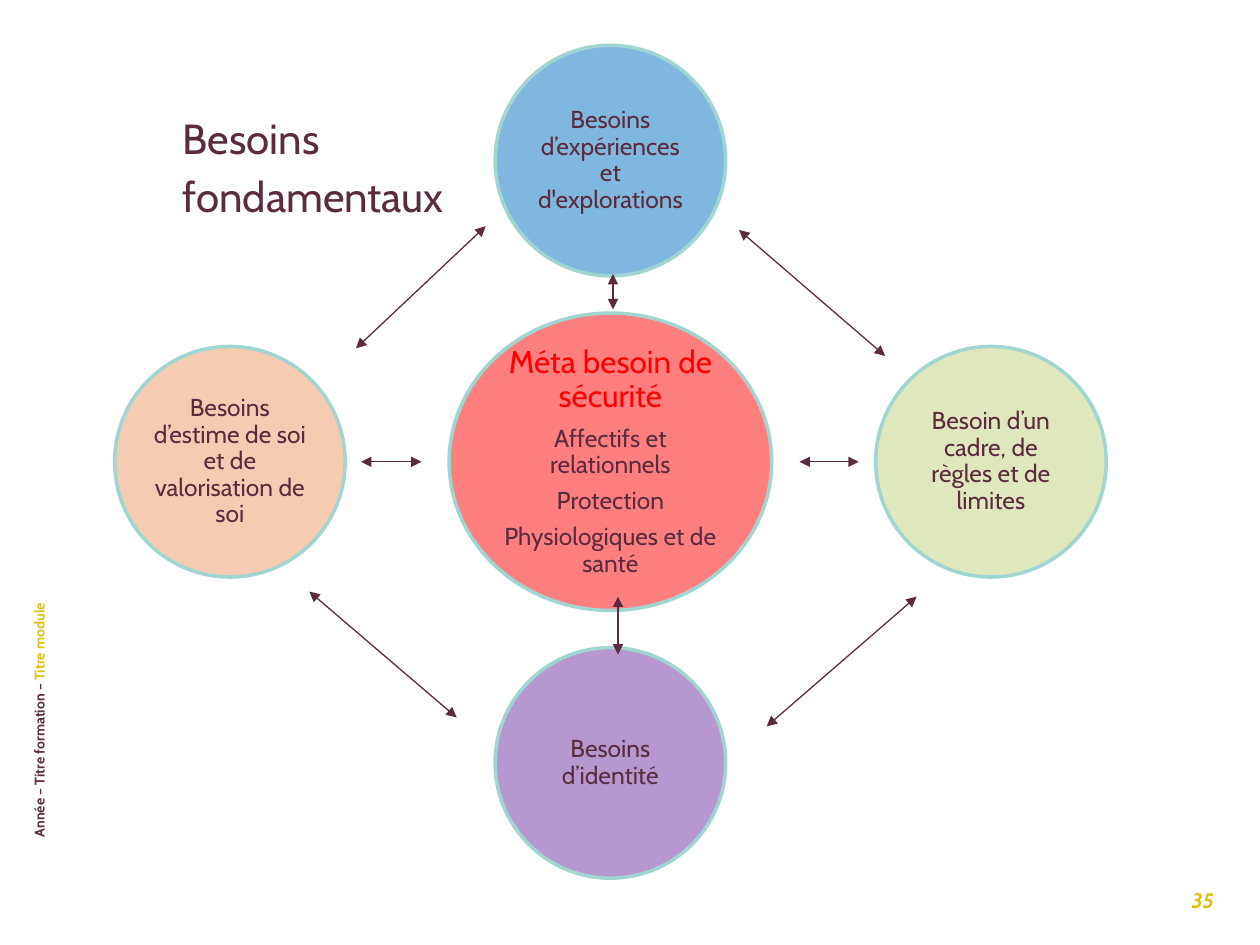
from dataclasses import dataclass

from pptx import Presentation
from pptx.dml.color import RGBColor
from pptx.enum.shapes import MSO_CONNECTOR, MSO_SHAPE
from pptx.enum.text import MSO_ANCHOR, MSO_AUTO_SIZE, PP_ALIGN
from pptx.oxml.ns import qn
from pptx.util import Inches, Pt
from lxml.etree import SubElement


@dataclass(frozen=True)
class Theme:
    font: str = "Cabin"
    plum: str = "5B2C3E"
    gold: str = "DBC10C"
    outline: str = "A1D5D2"
    red: str = "FF0000"
    blue: str = "0070C0"
    green: str = "C0D07A"
    purple: str = "7030A0"
    orange: str = "ED9B66"
    title: int = 24
    heading: int = 18
    body: int = 14
    number: int = 12
    footer: int = 8


THEME = Theme()
CELL = Inches(0.1)  # the slide is a grid of 100 columns by 75 rows

# Horizontal and vertical step from the centre, in satellites' own units
SATELLITES = [
    (0, -1, THEME.blue, "Besoins d’expériences et d'explorations"),
    (1, 0, THEME.green, "Besoin d’un cadre, de règles et de limites"),
    (0, 1, THEME.purple, "Besoins d’identité"),
    (-1, 0, THEME.orange, "Besoins d’estime de soi et de valorisation de soi"),
]
CORE_NEEDS = ["Méta besoin de sécurité", "Affectifs et relationnels",
              "Protection", "Physiologiques et de santé"]
# Arrow ends in cells, measured from the centre of the diagram
ARROWS = [
    ((-19.8, 0), (-15, 0)),
    ((15, 0), (19.7, 0)),
    ((-20.2, -9), (-9.9, -18.7)),
    ((12.4, 21), (24.3, 10.7)),
    ((21.8, -8.4), (10.2, -18.4)),
    ((-12.2, 20.3), (-23.9, 10.3)),
    ((0.6, 15.3), (0.6, 10.7)),
    ((0.2, -12.1), (0.2, -14.9)),
]


def cells(*values):
    return [round(value * CELL) for value in values]


def style(font, size, color, bold=False, italic=False):
    font.name, font.size = THEME.font, Pt(size)
    font.bold, font.italic = bold, italic
    font.color.rgb = RGBColor.from_string(color)


def add_title(slide, box):
    title = slide.shapes.title
    title.left, title.top, title.width, title.height = cells(*box)
    text_frame = title.text_frame
    text_frame.text = "Besoins\nfondamentaux"
    text_frame.word_wrap = True
    text_frame.auto_size = MSO_AUTO_SIZE.NONE
    text_frame.vertical_anchor = MSO_ANCHOR.TOP
    for paragraph in text_frame.paragraphs:
        paragraph.alignment = PP_ALIGN.LEFT
        style(paragraph.font, THEME.title, THEME.plum)
    text_frame.paragraphs[1].space_before = Pt(0.2 * THEME.title)


def add_page_number(slide, box):
    text_frame = slide.shapes.add_textbox(*cells(*box)).text_frame
    text_frame.text = "35"
    text_frame.word_wrap = True
    text_frame.vertical_anchor = MSO_ANCHOR.MIDDLE
    paragraph = text_frame.paragraphs[0]
    paragraph.alignment = PP_ALIGN.CENTER
    style(paragraph.runs[0].font, THEME.number, THEME.gold, True, True)


def add_side_footer(slide, box):
    footer = slide.shapes.add_textbox(*cells(*box))
    footer.rotation = 270
    footer.text_frame.word_wrap = True
    paragraph = footer.text_frame.paragraphs[0]
    for text, color in (("Année – Titre formation – ", THEME.plum),
                        ("Titre module", THEME.gold)):
        run = paragraph.add_run()
        run.text = text
        style(run.font, THEME.footer, color, bold=True)


def add_need(slide, center, size, color, lines, inset):
    """Add a half-transparent ellipse around a centre, with its text."""
    (x, y), (width, height) = center, size
    ellipse = slide.shapes.add_shape(
        MSO_SHAPE.OVAL, *cells(x - width / 2, y - height / 2, width, height))
    ellipse.shadow.inherit = False
    ellipse.fill.solid()
    ellipse.fill.fore_color.rgb = RGBColor.from_string(color)
    fill_color = ellipse.fill._xPr.find(qn("a:solidFill"))[0]
    SubElement(fill_color, qn("a:alpha"), val="50000")
    ellipse.line.color.rgb = RGBColor.from_string(THEME.outline)
    ellipse.line.width = Pt(2)

    text_frame = ellipse.text_frame
    text_frame.text = "\n".join(lines)
    text_frame.word_wrap = True
    text_frame.vertical_anchor = MSO_ANCHOR.MIDDLE
    text_frame.margin_left = text_frame.margin_right = Inches(inset)
    text_frame.margin_top = text_frame.margin_bottom = Inches(inset)
    for paragraph in text_frame.paragraphs:
        paragraph.alignment = PP_ALIGN.CENTER
        paragraph.line_spacing = 0.9
        paragraph.space_after = Pt(5.4)
        style(paragraph.font, THEME.body, THEME.plum)
    return text_frame.paragraphs


def add_double_arrow(slide, start, end):
    arrow = slide.shapes.add_connector(
        MSO_CONNECTOR.STRAIGHT, *cells(*start, *end))
    arrow.line.color.rgb = RGBColor.from_string(THEME.plum)
    arrow.line.width = Pt(0.75)
    line = arrow.line._get_or_add_ln()
    for tag in ("a:headEnd", "a:tailEnd"):
        SubElement(line, qn(tag), type="triangle")
    SubElement(arrow._element.spPr, qn("a:effectLst"))


def add_needs_diagram(slide, box):
    left, top, width, height = box
    diameter = 18.3
    center_x, center_y = left + width / 2, top + height / 2
    step_x, step_y = (width - diameter) / 2, (height - diameter) / 2

    heading = add_need(slide, (center_x, center_y), (25.6, 23.6),
                       THEME.red, CORE_NEEDS, 0.03)[0]
    heading.space_after = Pt(6.9)
    style(heading.font, THEME.heading, THEME.red)
    for across, down, color, text in SATELLITES:
        center = center_x + across * step_x, center_y + down * step_y
        add_need(slide, center, (diameter, diameter), color, [text], 0.02)
    for ends in ARROWS:
        add_double_arrow(
            slide, *((center_x + x, center_y + y) for x, y in ends))


def main():
    presentation = Presentation()
    presentation.slide_width, presentation.slide_height = cells(100, 75)
    slide = presentation.slides.add_slide(presentation.slide_layouts[5])
    add_page_number(slide, (92.1, 68.3, 6.7, 6.2))
    add_side_footer(slide, (-25.6, 37.5, 57.5, 2.4))
    add_title(slide, (13.5, 8.4, 24, 11))
    add_needs_diagram(slide, (9.1, 3.6, 78.7, 66.1))
    presentation.save("out.pptx")


if __name__ == "__main__":
    main()
